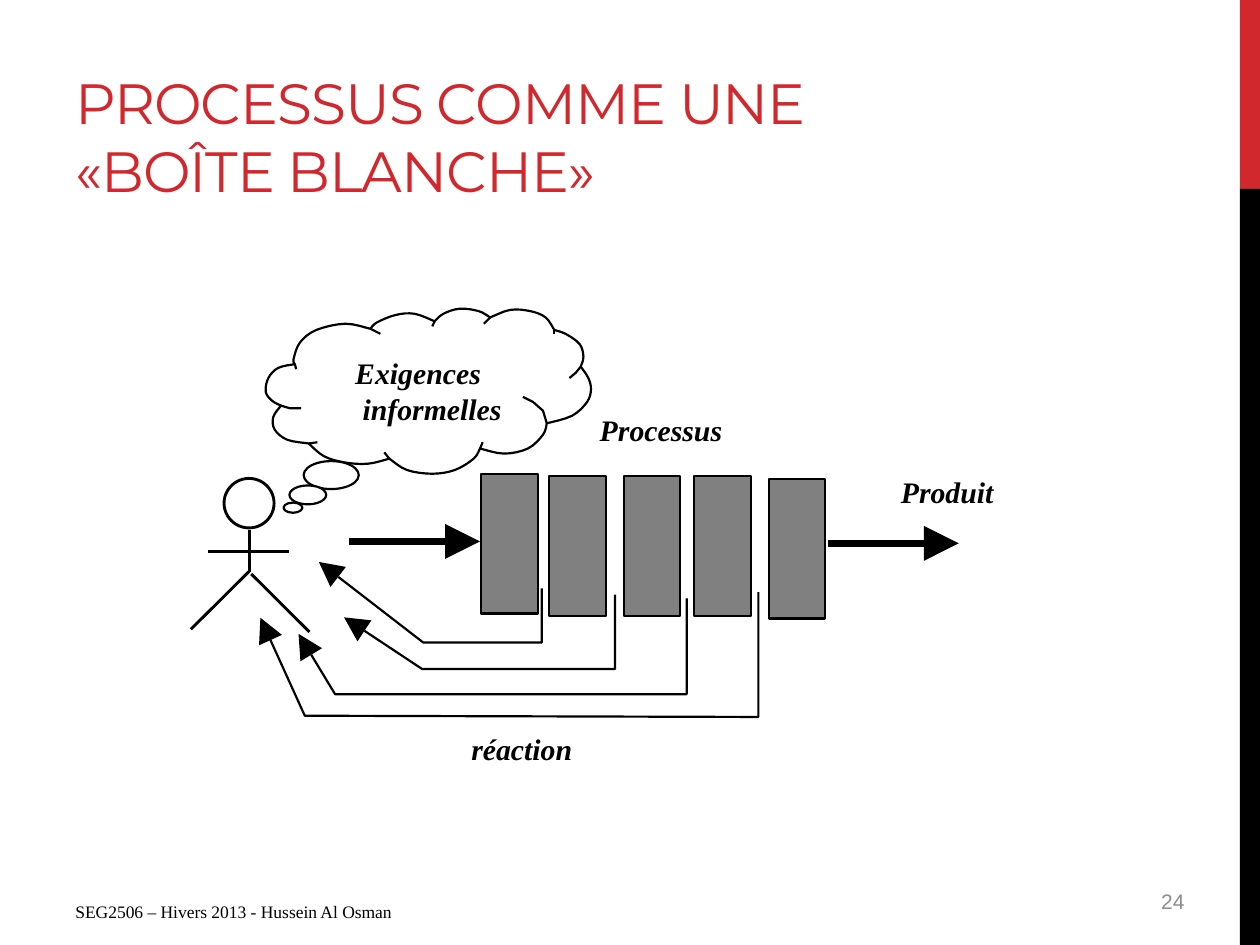
from math import hypot
from lxml.etree import SubElement
from pptx import Presentation
from pptx.dml.color import RGBColor
from pptx.enum.shapes import MSO_CONNECTOR, MSO_SHAPE
from pptx.enum.text import MSO_ANCHOR, MSO_AUTO_SIZE, PP_ALIGN
from pptx.oxml.ns import qn
from pptx.util import Pt

RED = RGBColor(0xD1, 0x28, 0x2E)
BLACK = RGBColor(0, 0, 0)
WHITE = RGBColor(0xFF, 0xFF, 0xFF)
GRAY = RGBColor(0x80, 0x80, 0x80)
PALE_GRAY = RGBColor(0x8C, 0x8C, 0x8C)
SERIF = "Times New Roman"
OUTLINE = 1.25
HEAD_LENGTH, HEAD_WIDTH = 14, 14.4

TITLE = "PROCESSUS COMME UNE «BOÎTE BLANCHE»"
FOOTER = "SEG2506 – Hivers 2013 - Hussein Al Osman"
PAGE_NUMBER = "24"
SIDEBAR = [(0, 108, RED), (108, 432, BLACK)]
LABELS = [
    (["Produit"], 514.8, 270.7, 53.3, 20.9),
    (["Processus"], 342.7, 235.4, 70.6, 20.9),
    (["Exigences", "informelles"], 203, 203, 84.2, 41),
    (["réaction"], 269.3, 417.6, 58.3, 20.9),
]
STEPS = [(275, 270.7), (313.9, 272.2), (356.4, 272.2), (396.7, 272.2), (439.2, 273.6)]
STEP_SIZE = (32.4, 79.9)
FLOW_ARROWS = [(199.4, 274.3, 309.4), (473, 547.9, 310.5)]
FIGURE_HEAD = (128, 273.4, 28.6, 28.3)
FIGURE_LIMBS = [
    (142.6, 303, 142.6, 327),
    (118.8, 315.4, 164.9, 315.4),
    (142.4, 326.5, 109.1, 359.6),
    (143.6, 328, 176.8, 361.1),
]
FEEDBACK = [
    [(309.6, 336.2), (309.6, 367.2), (241.9, 367.2), (182.2, 321.1)],
    [(351.4, 339.8), (351.4, 382.3), (241.2, 382.3), (196.6, 352.8)],
    [(392.4, 342), (392.4, 396.7), (191.5, 396.7), (170.6, 362.2)],
    [(433.4, 338.4), (433.4, 409.7), (174.2, 409), (148.8, 353)],
]
CLOUD_LOBES = [
    [(168.5, 208.1), (159.1, 210.2), (153.4, 216), (151.9, 223.9), (155.5, 229), (160.6, 231.8)],
    [(160.6, 231.8), (156.2, 238.3), (157, 245.5), (164.2, 251.3), (176.4, 253.4)],
    [(176.4, 253.4), (185, 260.6), (196.6, 264.2), (210.2, 265), (222.5, 262.1)],
    [(222.5, 262.1), (232.6, 268.6), (247, 270.7), (259.9, 268.6), (270.7, 262.1), (274.3, 256.3)],
    [(274.3, 256.3), (288, 259.2), (301.7, 256.3), (310.3, 248.4), (312.5, 241.9)],
    [(312.5, 241.9), (326.9, 237.6), (335.5, 229.7), (337.7, 222.5), (336.2, 216), (331.9, 209.5)],
    [(331.9, 209.5), (333.4, 203.8), (331.2, 196.6), (323.3, 190.8), (316.8, 188.6)],
    [(316.8, 188.6), (311.8, 181.4), (303.1, 177.8), (291.6, 177.1), (280.1, 181.4)],
    [(280.1, 181.4), (273.6, 177.8), (262.8, 176.4), (253.4, 179.3), (248.4, 183.6)],
    [(248.4, 183.6), (236.9, 179.3), (226.1, 180), (215.3, 184.3), (211.7, 187.9)],
    [(211.7, 187.9), (197.3, 185), (180.7, 188.6), (171.4, 195.8), (167.8, 205.2), (168.5, 208.1)],
]
CLOUD_FOLDS = [
    [(160.6, 231.8), (165.6, 233.3), (172.1, 233.3)],
    [(176.4, 253.4), (181.4, 252.7)],
    [(219.6, 258.5), (222.5, 262.1)],
    [(274.3, 256.3), (275.8, 252.7)],
    [(312.5, 241.9), (310.3, 234.7), (304.6, 229.7), (298.8, 226.8)],
    [(325.4, 216), (329, 213.1), (331.9, 209.5)],
    [(316.8, 190.8), (316.8, 188.6)],
    [(280.1, 181.4), (276.5, 185)],
    [(248.4, 183.6), (247, 186.5)],
    [(217.4, 190.8), (211.7, 187.9)],
    [(168.5, 208.1), (169.2, 211)],
]
CLOUD_BUBBLES = [(173.5, 263.5, 31.5, 16), (165.4, 277.4, 21, 10.8), (162, 287.2, 10.8, 5.8)]

deck = Presentation()
deck.slide_width, deck.slide_height = Pt(720), Pt(540)
page = deck.slides.add_slide(deck.slide_layouts[6])
shapes = page.shapes


def paint(shape, fill=None, line=None):
    shape.shadow.inherit = False
    if fill is None:
        shape.fill.background()
    else:
        shape.fill.solid()
        shape.fill.fore_color.rgb = fill
    if line is None:
        shape.line.fill.background()
    else:
        shape.line.color.rgb = BLACK
        shape.line.width = Pt(line)


def preset(kind, left, top, width, height, fill=None, line=None):
    shape = shapes.add_shape(kind, Pt(left), Pt(top), Pt(width), Pt(height))
    paint(shape, fill, line)


def outline(points, fill=None, line=None, close=False):
    corners = [(Pt(x), Pt(y)) for x, y in points]
    builder = shapes.build_freeform(*corners[0])
    builder.add_line_segments(corners[1:], close=close)
    paint(builder.convert_to_shape(), fill, line)


def straight(x1, y1, x2, y2, width, arrow=False):
    link = shapes.add_connector(MSO_CONNECTOR.STRAIGHT, Pt(x1), Pt(y1), Pt(x2), Pt(y2))
    link.line.color.rgb = BLACK
    link.line.width = Pt(width)
    if arrow:
        SubElement(link.line._get_or_add_ln(), qn("a:tailEnd"), type="triangle", w="lg", len="lg")
    SubElement(link._element.spPr, qn("a:effectLst"))


def smooth(points, steps=4):
    padded = [points[0], *points, points[-1]]
    curve = []
    for a, b, c, d in zip(padded, padded[1:], padded[2:], padded[3:]):
        for t in (step / steps for step in range(steps)):
            curve.append(tuple(
                q + t * (r - p) / 2 + t**2 * (2 * p - 5 * q + 4 * r - s) / 2
                + t**3 * (3 * q - p - 3 * r + s) / 2
                for p, q, r, s in zip(a, b, c, d)))
    return curve


def write(lines, left, top, width, height, size, color, font=SERIF, label=False,
          anchor=MSO_ANCHOR.TOP, align=PP_ALIGN.LEFT, spacing=None):
    box = shapes.add_textbox(Pt(left), Pt(top), Pt(width), Pt(height))
    frame = box.text_frame
    frame.word_wrap = not label
    frame.vertical_anchor = anchor
    if label:
        frame.auto_size = MSO_AUTO_SIZE.SHAPE_TO_FIT_TEXT
        frame.margin_left = frame.margin_top = frame.margin_right = frame.margin_bottom = 0
    for index, text in enumerate(lines):
        para = frame.paragraphs[0] if index == 0 else frame.add_paragraph()
        para.alignment = align
        if index:
            para._p.get_or_add_pPr().set("marL", str(Pt(4.25)))
        span = para.add_run()
        span.text = text
        span.font.name = font
        span.font.size = Pt(size)
        span.font.color.rgb = color
        span.font.bold = span.font.italic = label
        if spacing is not None:
            span.font._element.set("spc", str(spacing))


for top, height, color in SIDEBAR:
    preset(MSO_SHAPE.RECTANGLE, 708.5, top, 11.5, height, color)
write([TITLE], 36, 12.2, 455.8, 108, 32.4, RED, "Montserrat",
      anchor=MSO_ANCHOR.BOTTOM, spacing=-60)

for left, top in STEPS:
    preset(MSO_SHAPE.RECTANGLE, left, top, *STEP_SIZE, GRAY, OUTLINE)
for start, end, y in FLOW_ARROWS:
    straight(start, y, end, y, 4, arrow=True)

outline([point for lobe in CLOUD_LOBES for point in smooth(lobe)], WHITE, OUTLINE, close=True)
for fold in CLOUD_FOLDS:
    outline(fold, line=OUTLINE)
for bubble in CLOUD_BUBBLES:
    preset(MSO_SHAPE.OVAL, *bubble, WHITE, OUTLINE)

preset(MSO_SHAPE.OVAL, *FIGURE_HEAD, line=1.63)
for limb in FIGURE_LIMBS:
    straight(*limb, 1.63)

for route in FEEDBACK:
    (x1, y1), (x2, y2) = route[-2:]
    distance = hypot(x2 - x1, y2 - y1)
    dx, dy = (x2 - x1) / distance, (y2 - y1) / distance
    base_x, base_y = x2 - dx * HEAD_LENGTH, y2 - dy * HEAD_LENGTH
    half = HEAD_WIDTH / 2
    outline([*route[:-1], (base_x, base_y)], line=OUTLINE)
    outline([(x2, y2), (base_x - dy * half, base_y + dx * half),
             (base_x + dy * half, base_y - dx * half)], BLACK, close=True)

for lines, *place in LABELS:
    write(lines, *place, 17, BLACK, label=True)
write([FOOTER], 36, 511.2, 270, 22.3, 10, BLACK)
write([PAGE_NUMBER], 516.2, 500.4, 167.8, 28.8, 12, PALE_GRAY, "Arial",
      anchor=MSO_ANCHOR.MIDDLE, align=PP_ALIGN.RIGHT)

deck.save("out.pptx")
